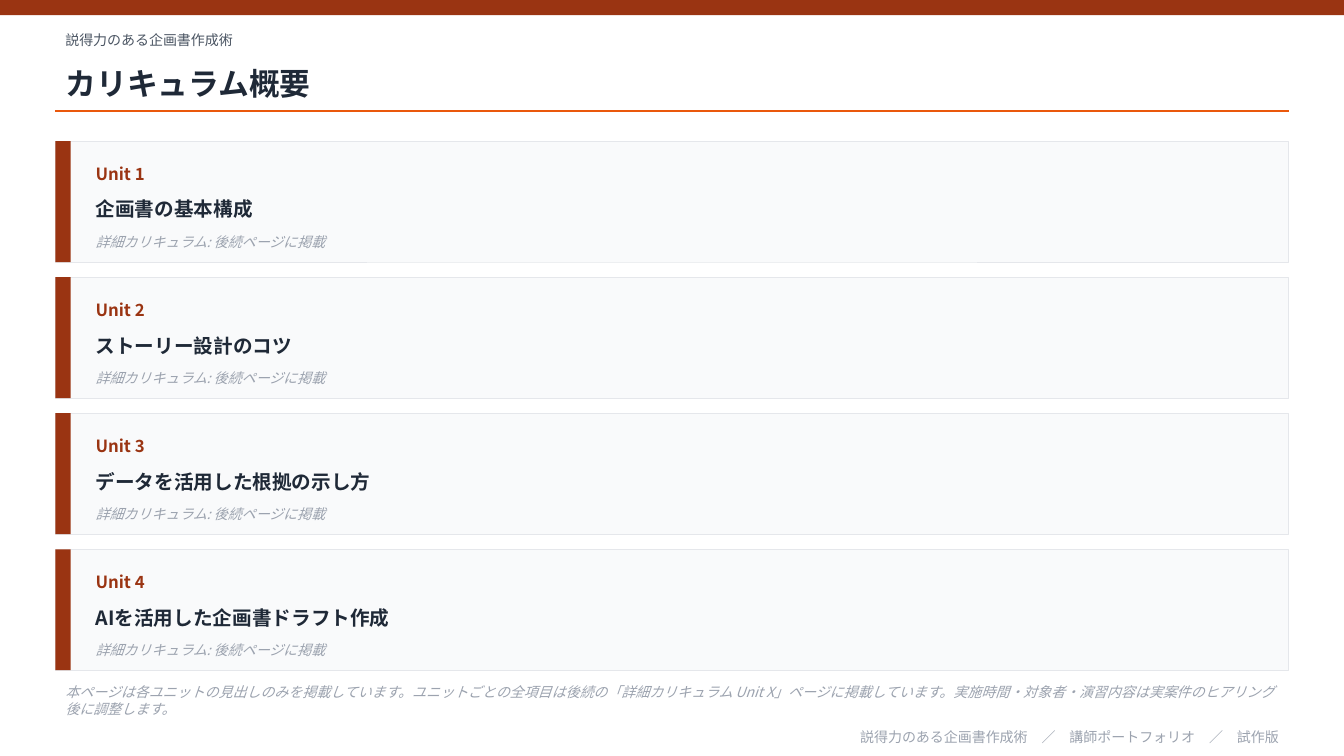
from lxml import etree
from pptx import Presentation
from pptx import util as u
from pptx.dml.color import RGBColor
from pptx.enum import shapes, text
from pptx.oxml.ns import qn

# Content
COURSE = "説得力のある企画書作成術"
TITLE = "カリキュラム概要"
UNITS = [
    "企画書の基本構成",
    "ストーリー設計のコツ",
    "データを活用した根拠の示し方",
    "AIを活用した企画書ドラフト作成",
]
DETAIL = "詳細カリキュラム: 後続ページに掲載"
NOTE = (
    "本ページは各ユニットの見出しのみを掲載しています。"
    "ユニットごとの全項目は後続の「詳細カリキュラム Unit X」ページに掲載しています。"
    "実施時間・対象者・演習内容は実案件のヒアリング後に調整します。"
)
FOOTER = "　／　".join([COURSE, "講師ポートフォリオ", "試作版"])

# Style and layout, in px at 100 px to the inch
FONT = "Noto Sans CJK JP"
COLORS = {
    "brand": "9A3412", "rule": "EA580C", "ink": "1F2937", "sub": "4B5563",
    "muted": "9CA3AF", "card": "F9FAFB", "border": "E5E7EB",
}
PX = 9144
SLIDE_W, SLIDE_H = 1333, 750
LEFT, WIDTH = 55, 1223
BAR = 15
CARD_TOP, CARD_H, CARD_GAP = 140, 120, 15
TEXT_LEFT, TEXT_W = LEFT + 30, WIDTH - 50


def px(*values):
    return [u.Emu(v * PX) for v in values]


def color(name):
    return RGBColor.from_string(COLORS[name])


def add_text(content, x, y, w, h, size=10, fill="muted", bold=False,
             italic=False, align=text.PP_ALIGN.LEFT, sp=None):
    """Write text in a new text box, or in sp when one is given."""
    if sp is None:
        sp = s.shapes.add_textbox(*px(x, y, w, h))
    else:
        sp.left, sp.top, sp.width, sp.height = px(x, y, w, h)
    tf = sp.text_frame
    tf.word_wrap = True
    tf.auto_size = text.MSO_AUTO_SIZE.NONE
    tf.vertical_anchor = text.MSO_ANCHOR.MIDDLE
    p = tf.paragraphs[0]
    p.alignment = align
    r = p.add_run()
    r.text = content
    f = r.font
    f.name, f.size, f.bold, f.italic = FONT, u.Pt(size), bold, italic
    f.color.rgb = color(fill)
    etree.SubElement(r._r.get_or_add_rPr(), qn("a:ea")).set("typeface", FONT)


def add_rect(x, y, w, h, fill, border=None):
    sp = s.shapes.add_shape(shapes.MSO_SHAPE.RECTANGLE, *px(x, y, w, h))
    sp.shadow.inherit = False
    sp.fill.solid()
    sp.fill.fore_color.rgb = color(fill)
    if border:
        sp.line.color.rgb = color(border)
        sp.line.width = u.Pt(0.5)
    else:
        sp.line.fill.background()


prs = Presentation()
prs.slide_width, prs.slide_height = px(SLIDE_W, SLIDE_H)
s = prs.slides.add_slide(prs.slide_layouts[5])

# Header
add_rect(0, 0, SLIDE_W, BAR, "brand")
add_text(COURSE, LEFT, 25, WIDTH, 30, fill="sub")
add_text(TITLE, LEFT, 55, WIDTH, 55, size=22, fill="ink", bold=True,
         sp=s.shapes.title)
rule = s.shapes.add_connector(shapes.MSO_CONNECTOR.STRAIGHT,
                              *px(LEFT, 110, LEFT + WIDTH, 110))
rule.line.color.rgb = color("rule")
rule.line.width = u.Pt(1)
etree.SubElement(rule._element.spPr, qn("a:effectLst"))

# Unit cards
for i, name in enumerate(UNITS):
    top = CARD_TOP + i * (CARD_H + CARD_GAP)
    add_rect(LEFT, top, WIDTH, CARD_H, "card", border="border")
    add_rect(LEFT, top, BAR, CARD_H, "brand")
    add_text(f"Unit {i + 1}", TEXT_LEFT, top + 12, 150, 40, size=12,
             fill="brand", bold=True)
    add_text(name, TEXT_LEFT, top + 45, TEXT_W, 45, size=14, fill="ink",
             bold=True)
    add_text(DETAIL, TEXT_LEFT, top + 85, TEXT_W, 30, italic=True)

# Note and footer
add_text(NOTE, LEFT, 675, WIDTH, 40, italic=True)
add_text(FOOTER, LEFT, 720, WIDTH, 22, align=text.PP_ALIGN.RIGHT)

prs.save("out.pptx")
